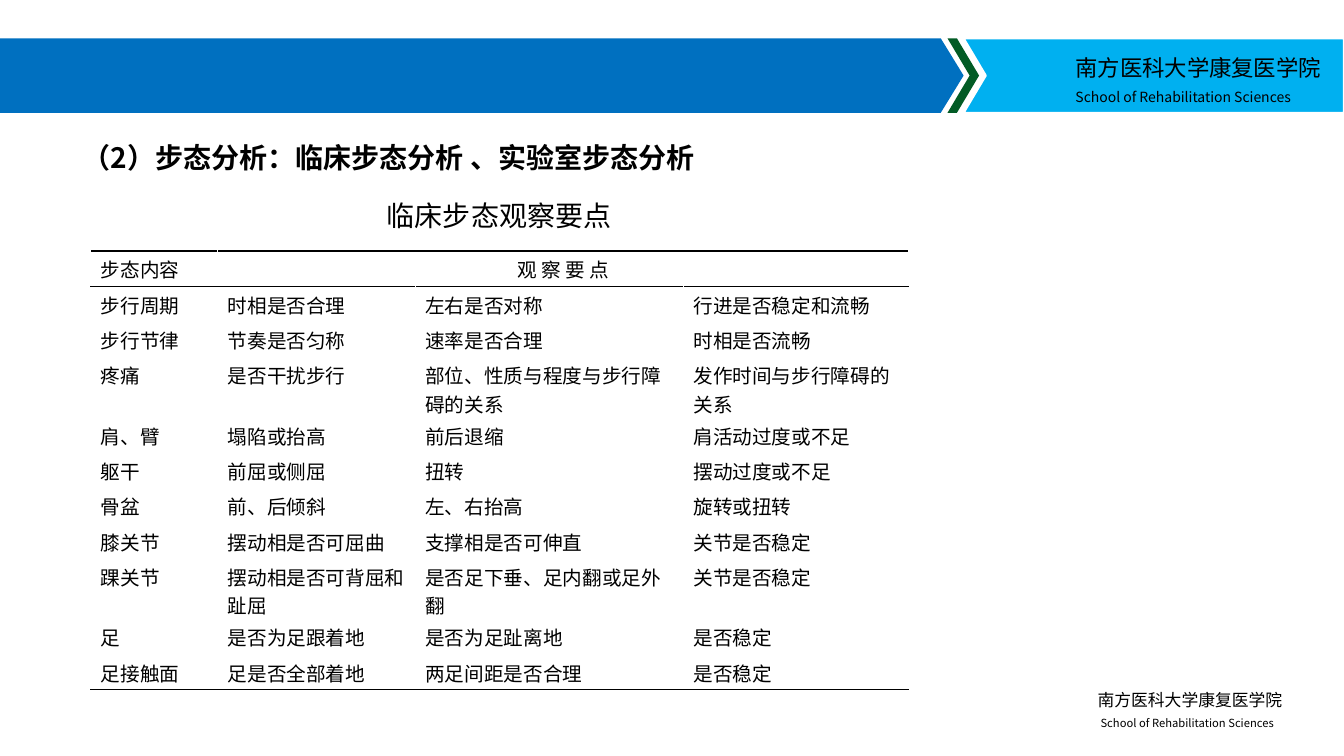
from dataclasses import dataclass

from lxml.etree import SubElement
from pptx import Presentation
from pptx.dml.color import RGBColor
from pptx.enum.text import MSO_ANCHOR as Anchor, MSO_AUTO_SIZE as AutoSize, PP_ALIGN as Align
from pptx.oxml import parse_xml
from pptx.oxml.ns import qn
from pptx.util import Inches, Pt

SLIDE_WIDTH, SLIDE_HEIGHT = Inches(13.33), Inches(7.5)
SANS, SCHOOL_FONT = "Noto Sans CJK SC", "Noto Sans CJK JP"
BLACK = "000000"
DRAWING_NS = "http://schemas.openxmlformats.org/drawingml/2006/main"
BANNER_TOP, BANNER_MIDDLE, BANNER_BOTTOM = 5.07, 10, 14.93
SCHOOL, SCHOOL_ENGLISH = "南方医科大学康复医学院", "School of Rehabilitation Sciences"


@dataclass(frozen=True)
class Band:
    """A banner piece, with corners in percent of the slide."""
    corners: tuple
    fill: str
    outline: str = ""


@dataclass(frozen=True)
class Label:
    """A text box, with its place in percent of the slide."""
    text: str
    left: float
    top: float
    width: float
    height: float
    size: float
    font: str = SANS
    bold: bool = False
    wrap: bool = True
    grow: bool = True
    anchor: Anchor = Anchor.TOP
    line_spacing: float = 1


BANDS = (
    Band(((0, BANNER_TOP), (70, BANNER_TOP), (71.7, BANNER_MIDDLE),
          (70, BANNER_BOTTOM), (0, BANNER_BOTTOM)), "0070C0"),
    Band(((70.5, BANNER_TOP), (71.2, BANNER_TOP), (72.85, BANNER_MIDDLE), (71.2, BANNER_BOTTOM),
          (70.5, BANNER_BOTTOM), (72.15, BANNER_MIDDLE)), "025B25"),
    Band(((71.7, BANNER_TOP), (100, BANNER_TOP), (100, BANNER_BOTTOM),
          (71.7, BANNER_BOTTOM), (73.35, BANNER_MIDDLE)), "00B0F0", "FFFFFF"),
)
LABELS = (
    Label(SCHOOL, 79.28, 6.53, 25.6, 4.93, 16, SCHOOL_FONT),
    Label(SCHOOL_ENGLISH, 79.28, 11.07, 31.73, 3.6, 10),
    Label(SCHOOL, 80.93, 90.53, 31.73, 4, 12, SCHOOL_FONT),
    Label(SCHOOL_ENGLISH, 81.15, 94.13, 39.3, 3.2, 8),
    Label("（2）步态分析：临床步态分析 、实验室步态分析", 5.4, 16.53, 89.1, 72.93, 20,
          bold=True, grow=False, line_spacing=1.3),
    Label("临床步态观察要点", 28.05, 25.6, 18.98, 5.87, 20, wrap=False, anchor=Anchor.MIDDLE),
)
OBSERVATIONS = (
    ("步态内容", "观 察 要 点", "", ""),
    ("步行周期", "时相是否合理", "左右是否对称", "行进是否稳定和流畅"),
    ("步行节律", "节奏是否匀称", "速率是否合理", "时相是否流畅"),
    ("疼痛", "是否干扰步行", "部位、性质与程度与步行障碍的关系", "发作时间与步行障碍的关系"),
    ("肩、臂", "塌陷或抬高", "前后退缩", "肩活动过度或不足"),
    ("躯干", "前屈或侧屈", "扭转", "摆动过度或不足"),
    ("骨盆", "前、后倾斜", "左、右抬高", "旋转或扭转"),
    ("膝关节", "摆动相是否可屈曲", "支撑相是否可伸直", "关节是否稳定"),
    ("踝关节", "摆动相是否可背屈和趾屈", "是否足下垂、足内翻或足外翻", "关节是否稳定"),
    ("足", "是否为足跟着地", "是否为足趾离地", "是否稳定"),
    ("足接触面", "足是否全部着地", "两足间距是否合理", "是否稳定"),
)
COLUMN_WIDTHS = (9.45, 14.7, 19.95, 16.73)
TWO_LINE_ROWS = (3, 8)
ROW_HEIGHT, TWO_LINE_HEIGHT = 4.67, 8


def across(percent: float) -> int:
    """Turn a percentage of the slide's width into a length."""
    return round(SLIDE_WIDTH * percent / 100)


def down(percent: float) -> int:
    """Turn a percentage of the slide's height into a length."""
    return round(SLIDE_HEIGHT * percent / 100)


def colour(hex_code: str) -> RGBColor:
    """Turn a hex string into a colour."""
    return RGBColor.from_string(hex_code)


def write(frame, text: str, *, size: float, font: str = SANS, bold: bool = False,
          align: Align = Align.LEFT, line_spacing: float = 1) -> None:
    """Write one formatted paragraph into a text frame."""
    paragraph = frame.paragraphs[0]
    paragraph.alignment = align
    paragraph.line_spacing = line_spacing
    run = paragraph.add_run()
    run.text = text
    run.font.size, run.font.bold, run.font.name = Pt(size), bold, font
    run.font.color.rgb = colour(BLACK)
    SubElement(run._r.get_or_add_rPr(), qn("a:ea"), typeface=font)


def draw_band(slide, band: Band) -> None:
    """Draw one piece of the banner."""
    start, *rest = [(across(x), down(y)) for x, y in band.corners]
    builder = slide.shapes.build_freeform(*start)
    builder.add_line_segments(rest, close=True)
    piece = builder.convert_to_shape()
    piece.shadow.inherit = False
    piece.fill.solid()
    piece.fill.fore_color.rgb = colour(band.fill)
    if band.outline:
        piece.line.color.rgb = colour(band.outline)
        piece.line.width = Pt(1.5)
    else:
        piece.line.fill.background()


def draw_label(slide, label: Label) -> None:
    """Draw one text box."""
    frame = slide.shapes.add_textbox(across(label.left), down(label.top),
                                     across(label.width), down(label.height)).text_frame
    frame.word_wrap = label.wrap
    frame.auto_size = AutoSize.SHAPE_TO_FIT_TEXT if label.grow else AutoSize.NONE
    frame.vertical_anchor = label.anchor
    write(frame, label.text, size=label.size, font=label.font, bold=label.bold,
          line_spacing=label.line_spacing)


def rule_cell(cell, sides: list[str]) -> None:
    """Rule the given sides of a table cell in black."""
    properties = cell._tc.get_or_add_tcPr()
    for position, side in enumerate(sides):
        properties.insert(position, parse_xml(
            f'<a:{side} xmlns:a="{DRAWING_NS}" w="{Pt(1)}"><a:solidFill>'
            f'<a:srgbClr val="{BLACK}"/></a:solidFill></a:{side}>'))


def draw_observations(slide) -> None:
    """Draw the table of gait observations."""
    last_row = len(OBSERVATIONS) - 1
    heights = [TWO_LINE_HEIGHT if row in TWO_LINE_ROWS else ROW_HEIGHT
               for row in range(len(OBSERVATIONS))]
    table = slide.shapes.add_table(len(OBSERVATIONS), len(COLUMN_WIDTHS), across(6.75), down(33.2),
                                   across(sum(COLUMN_WIDTHS)), down(sum(heights))).table
    table.first_row = table.horz_banding = False
    for column, width in zip(table.columns, COLUMN_WIDTHS):
        column.width = across(width)
    for row, height in zip(table.rows, heights):
        row.height = down(height)
    table.cell(0, 1).merge(table.cell(0, 3))
    for row, observation in enumerate(OBSERVATIONS):
        sides = ["lnT"] * (row <= 1) + ["lnB"] * (row in (0, last_row))
        for column, text in enumerate(observation):
            cell = table.cell(row, column)
            cell.fill.background()
            cell.margin_top, cell.margin_bottom = Inches(0.04), 0
            write(cell.text_frame, text, size=14,
                  align=Align.CENTER if row == 0 and column else Align.LEFT)
            rule_cell(cell, sides)


def main() -> None:
    """Build the gait analysis slide."""
    deck = Presentation()
    deck.slide_width, deck.slide_height = SLIDE_WIDTH, SLIDE_HEIGHT
    slide = deck.slides.add_slide(deck.slide_layouts[6])
    for band in BANDS:
        draw_band(slide, band)
    for label in LABELS:
        draw_label(slide, label)
    draw_observations(slide)
    deck.save("out.pptx")


if __name__ == "__main__":
    main()
